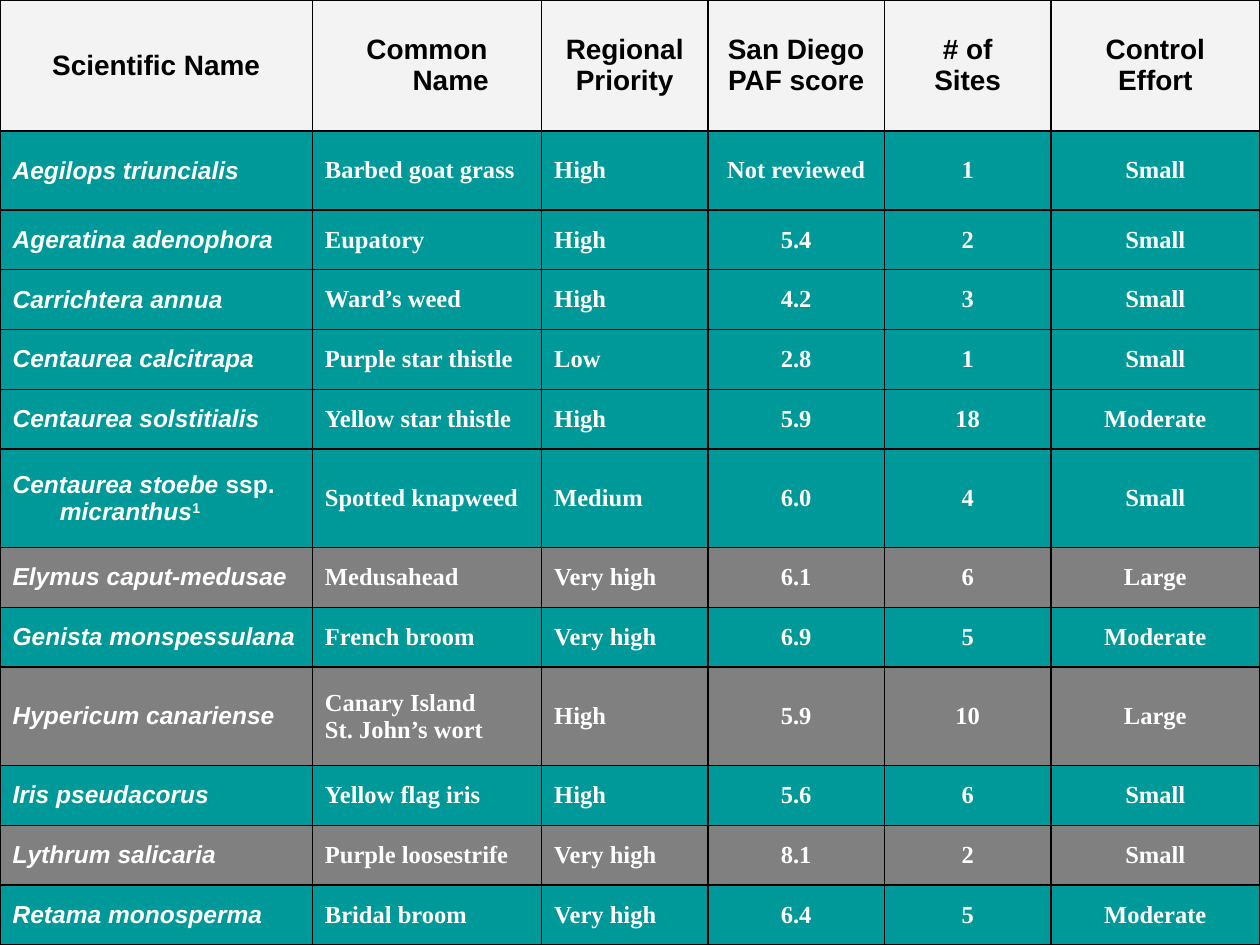
"""Build the slide that ranks invasive plants by priority and control effort."""
from dataclasses import dataclass

from lxml.etree import SubElement
from pptx import Presentation
from pptx.dml.color import RGBColor
from pptx.enum.text import MSO_ANCHOR, PP_ALIGN
from pptx.oxml.ns import qn
from pptx.util import Pt


@dataclass(frozen=True)
class Theme:
    teal: str = "009999"
    gray: str = "808080"
    header_fill: str = "F3F3F3"
    dark: str = "000000"
    light: str = "FFFFFF"
    sans: str = "Arial"
    serif: str = "Times New Roman"
    header_size: float = 16
    body_size: float = 14
    border_width: float = 1
    hanging: float = 27
    wide_hanging: float = 40


COLUMN_WIDTHS = [178.5, 131, 95, 101, 95, 119.5]
HEADER_HEIGHT, FIRST_HEIGHT, SINGLE_HEIGHT, DOUBLE_HEIGHT = 75, 45, 34.16, 56.28
HEADERS = ["Scientific Name", "Common Name", "Regional\nPriority",
           "San Diego PAF score", "# of\nSites", "Control\nEffort"]
SPOTTED_KNAPWEED = [("Centaurea stoebe ", {}), ("ssp.", {"italic": False}),
                    (" micranthus", {}), ("1", {"italic": False, "superscript": True})]
PLANTS = [
    ("Aegilops triuncialis", "Barbed goat grass", "High", "Not reviewed", "1", "Small"),
    ("Ageratina adenophora", "Eupatory", "High", "5.4", "2", "Small"),
    ("Carrichtera annua", "Ward’s weed", "High", "4.2", "3", "Small"),
    ("Centaurea calcitrapa", "Purple star thistle", "Low", "2.8", "1", "Small"),
    ("Centaurea solstitialis", "Yellow star thistle", "High", "5.9", "18", "Moderate"),
    (SPOTTED_KNAPWEED, "Spotted knapweed", "Medium", "6.0", "4", "Small"),
    ("Elymus caput-medusae", "Medusahead", "Very high", "6.1", "6", "Large"),
    ("Genista monspessulana", "French broom", "Very high", "6.9", "5", "Moderate"),
    ("Hypericum canariense", "Canary Island\nSt. John’s wort", "High", "5.9", "10", "Large"),
    ("Iris pseudacorus", "Yellow flag iris", "High", "5.6", "6", "Small"),
    ("Lythrum salicaria", "Purple loosestrife", "Very high", "8.1", "2", "Small"),
    ("Retama monosperma", "Bridal broom", "Very high", "6.4", "5", "Moderate"),
]
GRAY_PLANTS = {"Elymus caput-medusae", "Hypericum canariense", "Lythrum salicaria"}
DOUBLE_NAMES = {"Spotted knapweed", "Canary Island\nSt. John’s wort"}


def write_text(frame, text, *, font, size, color, italic=False, centered=False, hanging=0):
    lines = [[(line, {})] for line in text.split("\n")] if isinstance(text, str) else [text]
    for index, pieces in enumerate(lines):
        paragraph = frame.add_paragraph() if index else frame.paragraphs[0]
        paragraph.alignment = PP_ALIGN.CENTER if centered else PP_ALIGN.LEFT
        properties = paragraph._p.get_or_add_pPr()
        properties.set("marL", str(Pt(hanging)))
        properties.set("indent", str(-Pt(hanging)))
        for piece, change in pieces:
            run = paragraph.add_run()
            run.text = piece
            run.font.name = font
            run.font.size = Pt(size)
            run.font.bold = True
            run.font.italic = change.get("italic", italic)
            run.font.color.rgb = RGBColor.from_string(color)
            if change.get("superscript"):
                run._r.get_or_add_rPr().set("baseline", "30000")


class SlideBuilder:
    def __init__(self, slide, theme):
        self.slide = slide
        self.theme = theme

    def background(self, color):
        fill = self.slide.background.fill
        fill.solid()
        fill.fore_color.rgb = RGBColor.from_string(color)

    def table(self, left, top, widths, heights):
        shape = self.slide.shapes.add_table(len(heights), len(widths), Pt(left), Pt(top),
                                            Pt(sum(widths)), Pt(sum(heights)))
        table = shape.table
        table.first_row = table.horz_banding = False
        for column, width in zip(table.columns, widths):
            column.width = Pt(width)
        for row, height in zip(table.rows, heights):
            row.height = Pt(height)
        return table

    def borders(self, cell):
        properties = cell._tc.get_or_add_tcPr()
        for side in ("lnL", "lnR", "lnT", "lnB"):
            line = SubElement(properties, qn(f"a:{side}"), w=str(Pt(self.theme.border_width)))
            SubElement(SubElement(line, qn("a:solidFill")), qn("a:srgbClr"), val=self.theme.dark)

    def cell(self, cell, text, fill=None, **text_format):
        self.borders(cell)
        if fill:
            cell.fill.solid()
            cell.fill.fore_color.rgb = RGBColor.from_string(fill)
        else:
            cell.fill.background()
        cell.vertical_anchor = MSO_ANCHOR.MIDDLE
        write_text(cell.text_frame, text, **text_format)


def main():
    theme = Theme()
    presentation = Presentation()
    presentation.slide_width, presentation.slide_height = Pt(720), Pt(540)
    builder = SlideBuilder(presentation.slides.add_slide(presentation.slide_layouts[6]), theme)
    builder.background(theme.teal)

    heights = [DOUBLE_HEIGHT if plant[1] in DOUBLE_NAMES else SINGLE_HEIGHT for plant in PLANTS]
    heights[0] = FIRST_HEIGHT
    table = builder.table(0, 0, COLUMN_WIDTHS, [HEADER_HEIGHT, *heights])

    header_hanging = {"San Diego PAF score": 0, "# of\nSites": theme.wide_hanging}
    for column, header in enumerate(HEADERS):
        builder.cell(table.cell(0, column), header, fill=theme.header_fill, font=theme.sans,
                     size=theme.header_size, color=theme.dark, centered=True,
                     hanging=header_hanging.get(header, theme.hanging))
    for row, plant in enumerate(PLANTS, start=1):
        fill = theme.gray if str(plant[0]) in GRAY_PLANTS else None
        for column, text in enumerate(plant):
            scientific = column == 0
            builder.cell(table.cell(row, column), text, fill=fill,
                         font=theme.sans if scientific else theme.serif,
                         size=theme.body_size, color=theme.light, italic=scientific,
                         centered=column >= 3, hanging=theme.hanging)
    presentation.save("out.pptx")


if __name__ == "__main__":
    main()
